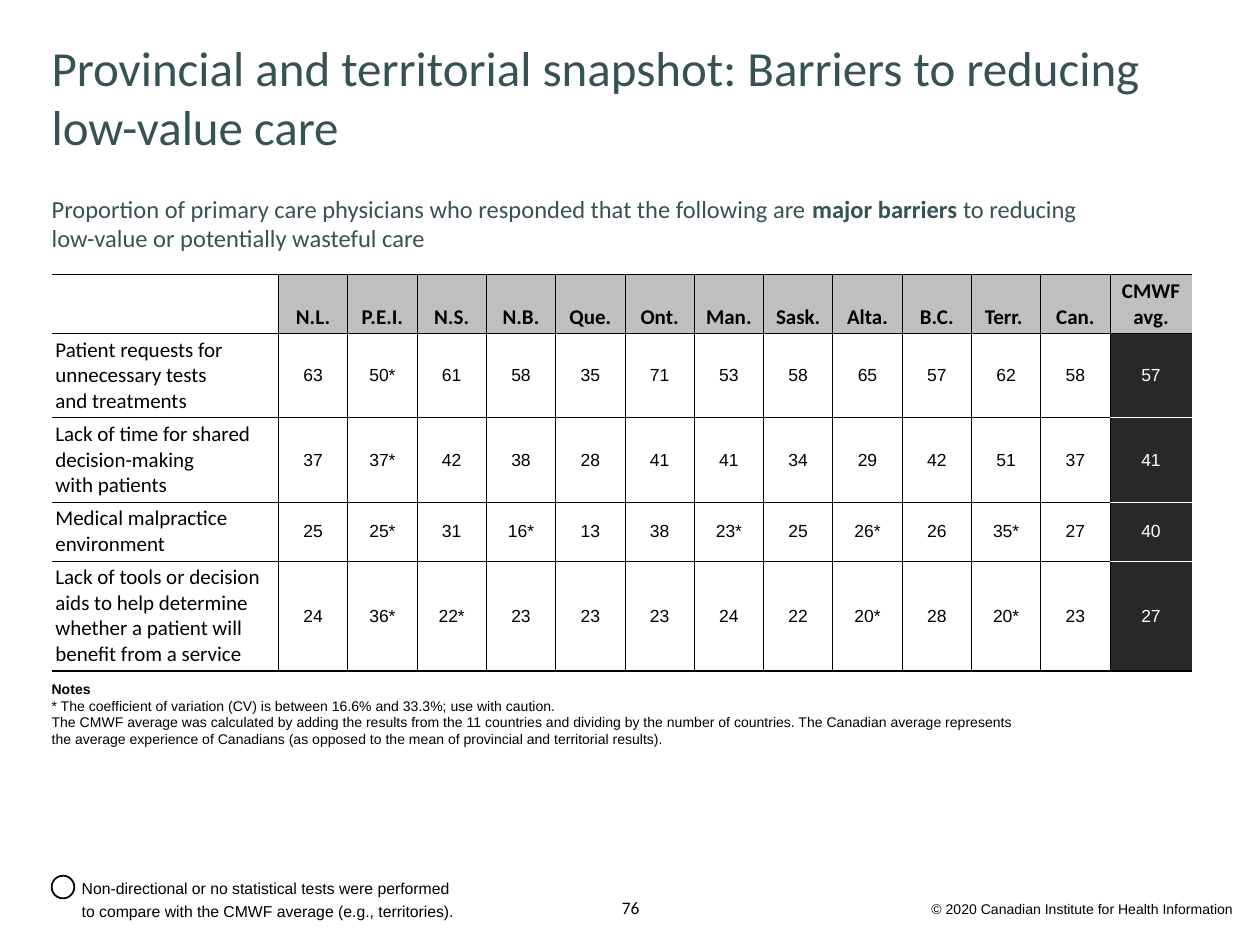
from lxml import etree
from pptx import Presentation
from pptx.dml.color import RGBColor
from pptx.enum.shapes import MSO_SHAPE
from pptx.enum.text import MSO_ANCHOR, MSO_AUTO_SIZE, PP_ALIGN
from pptx.oxml.ns import qn
from pptx.util import Inches, Pt

LEFT, CENTER, RIGHT = PP_ALIGN.LEFT, PP_ALIGN.CENTER, PP_ALIGN.RIGHT
TOP, MIDDLE, BOTTOM = MSO_ANCHOR.TOP, MSO_ANCHOR.MIDDLE, MSO_ANCHOR.BOTTOM
OVAL = MSO_SHAPE.OVAL
NO_AUTOFIT = MSO_AUTO_SIZE.NONE

COLORS = {"teal": "365254", "black": "000000", "white": "FFFFFF",
          "header": "BFBFBF", "average": "282828"}
MARGIN = 0.41
THIN, THICK = 0.5, 1
DEFAULT_INSETS = (0.1, 0.05, 0.1, 0.05)
CELL_INSETS = (0.03,) * 4

REGIONS = ["N.L.", "P.E.I.", "N.S.", "N.B.", "Que.", "Ont.", "Man.", "Sask.",
           "Alta.", "B.C.", "Terr. ", "Can.", "CMWF avg."]
BARRIERS = [
    ("Patient requests for unnecessary tests \nand treatments",
     "63 50* 61 58 35 71 53 58 65 57 62 58 57"),
    ("Lack of time for shared decision-making \nwith patients",
     "37 37* 42 38 28 41 41 34 29 42 51 37 41"),
    ("Medical malpractice environment",
     "25 25* 31 16* 13 38 23* 25 26* 26 35* 27 40"),
    ("Lack of tools or decision aids to help determine whether a patient "
     "will benefit from a service",
     "24 36* 22* 23 23 23 24 22 20* 28 20* 23 27"),
]
COLUMN_WIDTHS = [1.8] + [0.55] * 12 + [0.65]
ROW_HEIGHTS = [0.42, 0.59, 0.59, 0.42, 0.52]


def rgb(color):
    return RGBColor.from_string(COLORS[color])


class SlideBuilder:
    def __init__(self, slide):
        self.slide = slide

    def fill_text(self, frame, paragraphs, size, color="black", font="Calibri",
                  align=LEFT, line_spacing=None):
        """Each paragraph is a list of (text, bold) runs."""
        for index, runs in enumerate(paragraphs):
            paragraph = frame.paragraphs[0] if index == 0 else frame.add_paragraph()
            paragraph.alignment = align
            if line_spacing:
                paragraph.line_spacing = Pt(line_spacing)
            for text, bold in runs:
                for line_number, line in enumerate(text.split("\n")):
                    if line_number:
                        paragraph.add_line_break()
                    run = paragraph.add_run()
                    run.text = line
                    style = {"name": font, "size": Pt(size), "bold": bold}
                    for name, value in style.items():
                        setattr(run.font, name, value)
                    run.font.color.rgb = rgb(color)

    def frame_format(self, frame, insets, anchor):
        left, top, right, bottom = map(Inches, insets)
        settings = {"word_wrap": True, "auto_size": NO_AUTOFIT,
                    "vertical_anchor": anchor, "margin_left": left,
                    "margin_top": top, "margin_right": right,
                    "margin_bottom": bottom}
        for name, value in settings.items():
            setattr(frame, name, value)

    def title(self, text, box, size):
        title = self.slide.shapes.title
        for name, value in zip(("left", "top", "width", "height"), box):
            setattr(title, name, Inches(value))
        self.frame_format(title.text_frame, (0,) * 4, TOP)
        self.fill_text(title.text_frame, [[(text, False)]], size, "teal")

    def text(self, paragraphs, box, size, insets=DEFAULT_INSETS, anchor=TOP, **style):
        frame = self.slide.shapes.add_textbox(*map(Inches, box)).text_frame
        self.frame_format(frame, insets, anchor)
        self.fill_text(frame, paragraphs, size, **style)

    def circle(self, box):
        circle = self.slide.shapes.add_shape(OVAL, *map(Inches, box))
        circle.shadow.inherit = False
        circle.fill.solid()
        circle.fill.fore_color.rgb = rgb("white")
        circle.line.color.rgb = rgb("black")
        circle.line.width = Pt(THICK)

    def borders(self, cell, sides):
        """Sides run left, right, top, bottom; None draws no line."""
        properties = cell._tc.get_or_add_tcPr()
        for side, border in zip("LRTB", sides):
            line = etree.SubElement(properties, qn(f"a:ln{side}"))
            if border is None:
                etree.SubElement(line, qn("a:noFill"))
                continue
            color, width = border
            line.set("w", str(Pt(width)))
            fill = etree.SubElement(line, qn("a:solidFill"))
            etree.SubElement(fill, qn("a:srgbClr"), val=COLORS[color])

    def cell(self, cell, text, fill, sides, anchor, size=12, bold=False, **style):
        self.borders(cell, sides)
        if fill:
            cell.fill.solid()
            cell.fill.fore_color.rgb = rgb(fill)
        else:
            cell.fill.background()
        margins = ("margin_left", "margin_top", "margin_right", "margin_bottom")
        for name, value in zip(margins, CELL_INSETS):
            setattr(cell, name, Inches(value))
        cell.vertical_anchor = anchor
        if text:
            self.fill_text(cell.text_frame, [[(text, bold)]], size, **style)

    def table(self, left, top):
        rows, columns = len(ROW_HEIGHTS), len(COLUMN_WIDTHS)
        table = self.slide.shapes.add_table(
            rows, columns, Inches(left), Inches(top),
            Inches(sum(COLUMN_WIDTHS)), Inches(sum(ROW_HEIGHTS))).table
        table.first_row = table.horz_banding = False
        for column, width in zip(table.columns, COLUMN_WIDTHS):
            column.width = Inches(width)
        for row, height in zip(table.rows, ROW_HEIGHTS):
            row.height = Inches(height)

        contents = [["", *REGIONS]]
        contents += [[label, *values.split()] for label, values in BARRIERS]
        last_row, last_column = rows - 1, columns - 1
        for r, row in enumerate(contents):
            for c, text in enumerate(row):
                average = c == last_column and r > 0
                sides = (
                    ("black", THIN) if c > 0 else None,
                    ("black", THIN) if c < last_column else None,
                    ("white" if average and r > 1 else "black",
                     THIN if r else THICK),
                    ("white" if average and r < last_row else "black",
                     THIN if r < last_row else THICK),
                )
                if r == 0:
                    look = {"fill": "header" if c else None, "anchor": BOTTOM,
                            "bold": True, "align": CENTER}
                elif c == 0:
                    look = {"fill": "white", "anchor": TOP}
                else:
                    look = {"fill": "average" if average else None,
                            "color": "white" if average else "black",
                            "anchor": MIDDLE, "align": CENTER,
                            "size": 10, "font": "Arial"}
                self.cell(table.cell(r, c), text, sides=sides, **look)


def main():
    deck = Presentation()
    deck.slide_width, deck.slide_height = Inches(10), Inches(7.5)
    title_only = deck.slide_layouts[5]
    builder = SlideBuilder(deck.slides.add_slide(title_only))

    # Title and question
    builder.title("Provincial and territorial snapshot: Barriers to reducing "
                  "low-value care", (MARGIN, 0.3, 9, 0.61), 28)
    builder.text([[("Proportion of primary care physicians who responded that "
                    "the following are ", False),
                   ("major barriers ", True),
                   ("to reducing \nlow-value or potentially wasteful care", False)]],
                 (MARGIN, 1.44, 9.21, 0.72), 14, (0, 0.1, 0.1, 0.15), color="teal")

    # Results by province and territory
    builder.table(MARGIN, 2.18)

    # Notes
    builder.text([[("Notes", True)],
                  [("* The coefficient of variation (CV) is between 16.6% and "
                    "33.3%; use with caution.", False)],
                  [("The CMWF average was calculated by adding the results from "
                    "the 11 countries and dividing by the number of countries. "
                    "The Canadian average represents the average experience of "
                    "Canadians (as opposed to the mean of provincial and "
                    "territorial results).", False)]],
                 (MARGIN, 5.3, 7.89, 0.64), 8, (0, 0.1, 0.1, 0), font="Arial")

    # Legend
    builder.text([[("Non-directional or no statistical tests were performed \n"
                    "to compare with the CMWF average (e.g., territories).", False)]],
                 (0.55, 6.9, 3.57, 0.45), 9, anchor=MIDDLE, font="Arial",
                 line_spacing=13)
    builder.circle((MARGIN, 6.95, 0.18, 0.18))

    # Page number and copyright
    builder.text([[("76", False)]], (4.69, 7.12, 0.63, 0.17), 10, (0,) * 4,
                 MIDDLE, align=CENTER)
    builder.text([[("© 2020 Canadian Institute for Health Information ", False)]],
                 (7.05, 7.1, 2.87, 0.24), 8, font="Arial", align=RIGHT)

    deck.save("out.pptx")


if __name__ == "__main__":
    main()
